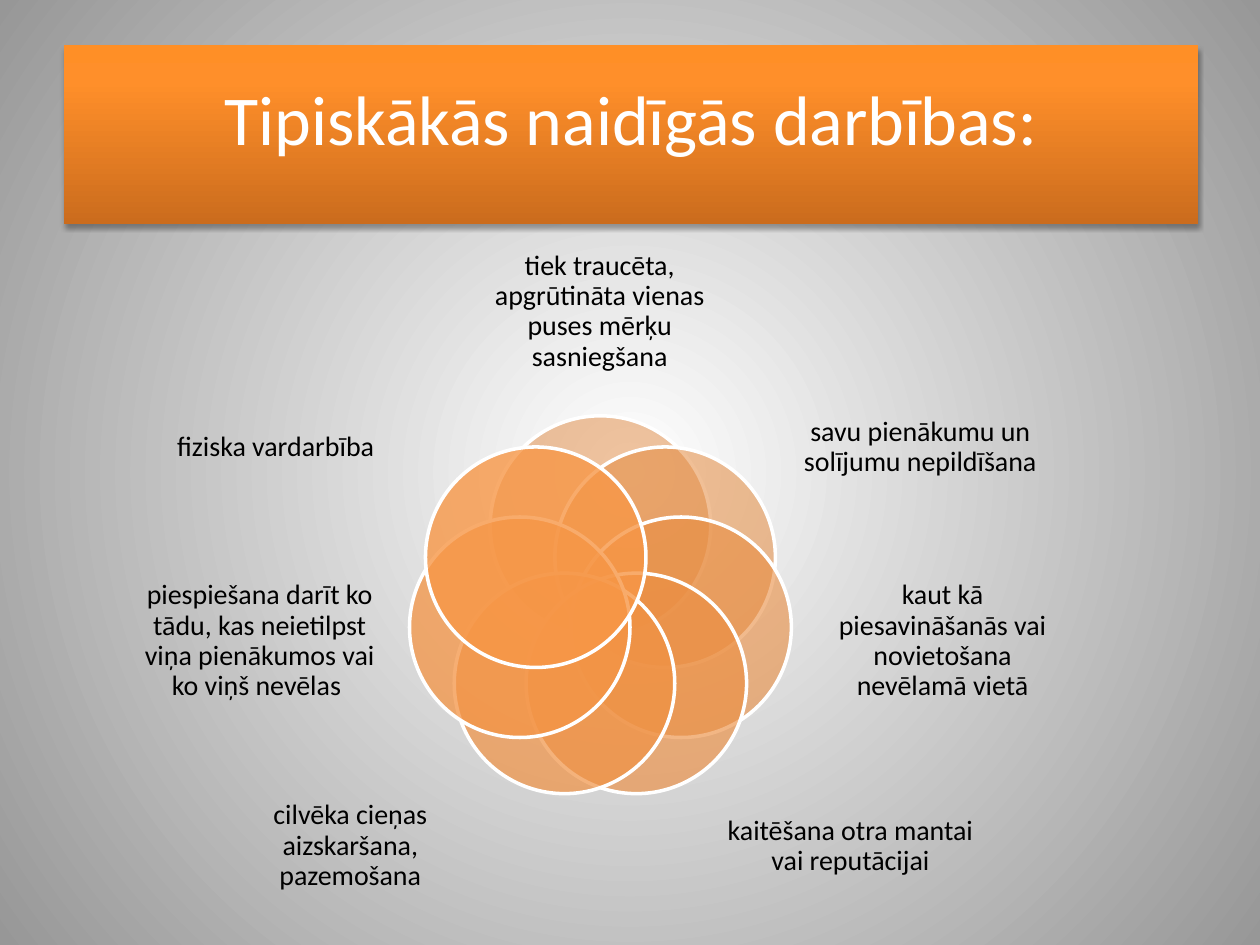
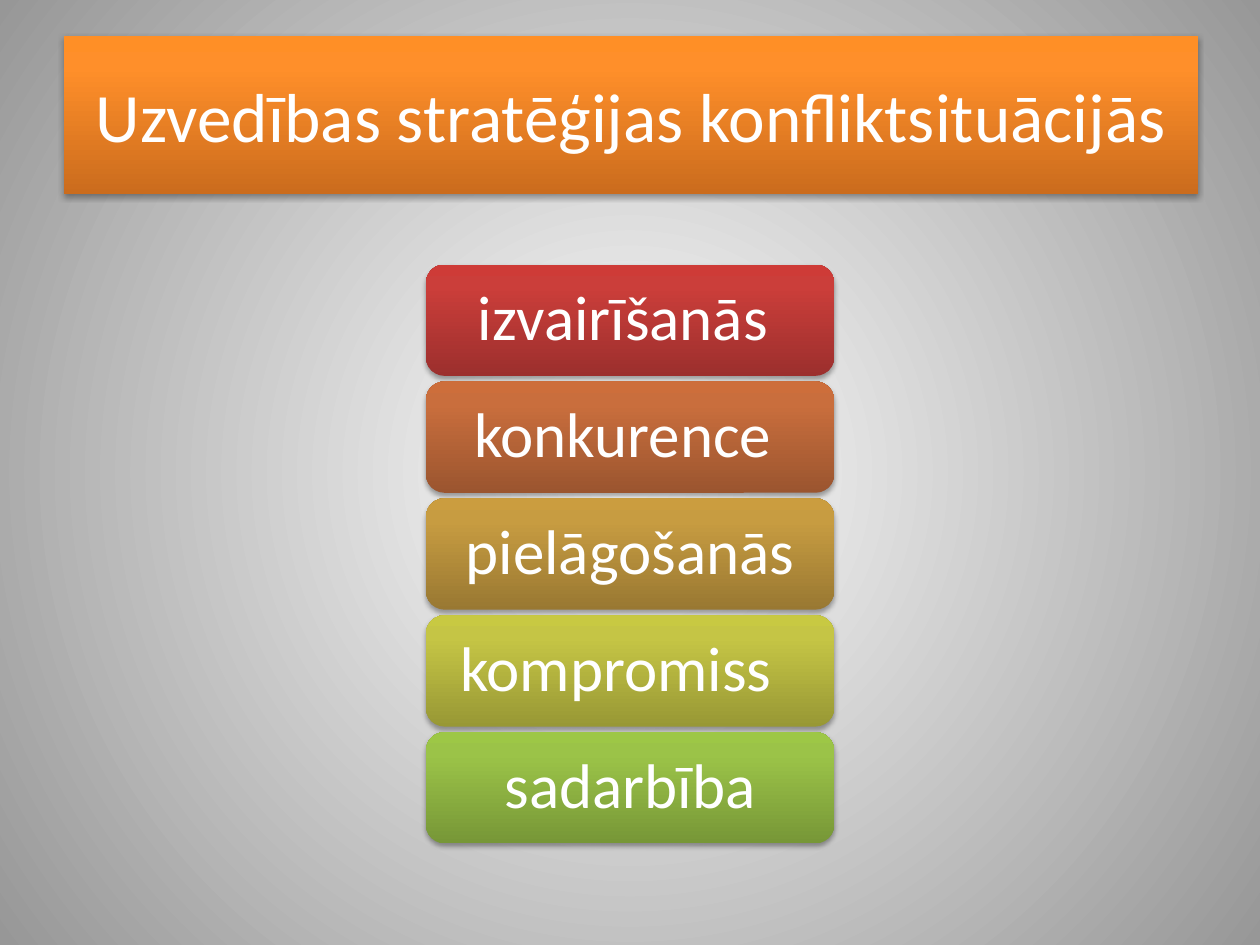
import math

import pptx
import pptx.dml.color
import pptx.enum.shapes
import pptx.enum.text
import pptx.oxml
import pptx.oxml.ns
import pptx.util

Pt = pptx.util.Pt
SHAPES = pptx.enum.shapes.MSO_SHAPE
FONT = "Calibri"
WHITE, BLACK = "FFFFFF", "000000"
DRAWING = 'xmlns:a="http://schemas.openxmlformats.org/drawingml/2006/main"'
BACKDROP = [(0, WHITE), (100, "979797")]
TITLE_STOPS = [(0, "CB6C1D"), (80, "FF8F2A"), (100, "FF8F26")]
RADIAL = ('<a:path path="circle"><a:fillToRect l="50000" t="50000" '
          'r="50000" b="50000"/></a:path>')
UPWARD = '<a:lin ang="16200000" scaled="0"/>'

# Circle fill, opacity in percent, label and label frame, clockwise from the top
ACTIONS = [
    ("E08840", 50, "tiek traucēta, apgrūtināta vienas puses mērķu sasniegšana",
     (270.7, 139.7, 144, 77)),
    ("E48B40", 55, "savu pienākumu un solījumu nepildīšana",
     (457.9, 213.1, 136, 85)),
    ("E98D41", 60, "kaut kā piesavināšanās vai novietošana nevēlamā vietā",
     (471.6, 321.1, 134, 90.7)),
    ("EC8F43", 65, "kaitēšana otra mantai vai reputācijai",
     (414, 442.1, 144, 82.8)),
    ("F09244", 70, "cilvēka cieņas aizskaršana, pazemošana",
     (128.2, 442.1, 144, 82.8)),
    ("F49445", 75, "piespiešana darīt ko tādu, kas neietilpst viņa pienākumos "
     "vai ko viņš nevēlas ", (81.4, 321.1, 134, 90.7)),
    ("F79747", 80, "fiziska vardarbība ", (91.4, 213.1, 136, 85)),
]

# Label, extra right inset, gradient colours from the bottom up
STRATEGIES = [
    ("izvairīšanās ", 0, ("9C2F2D", "CB3E3A", "CE3B37")),
    ("konkurence ", 0, ("9B552F", "C96E3D", "CD6E3B")),
    ("pielāgošanās", 0, ("997832", "C79C41", "CB9D3F")),
    ("kompromiss ", 8, ("989835", "C5C545", "C8C942")),
    ("sadarbība", 0, ("779737", "9BC348", "9DC746")),
]


def color(value):
    return pptx.dml.color.RGBColor.from_string(value)


def set_gradient(owner, fill, stops, direction):
    """Give the fill of owner, an XML element, any number of colour stops."""
    fill.solid()
    fill.fore_color.rgb = color(WHITE)
    stop_xml = "".join(
        f'<a:gs pos="{position * 1000}"><a:srgbClr val="{value}"/></a:gs>'
        for position, value in stops)
    gradient = pptx.oxml.parse_xml(
        f'<a:gradFill {DRAWING} rotWithShape="1"><a:gsLst>{stop_xml}</a:gsLst>'
        f'{direction}</a:gradFill>')
    solid = owner.find(pptx.oxml.ns.qn("a:solidFill"))
    owner.replace(solid, gradient)


def add_shadow(shape):
    effects = shape.element.spPr.find(pptx.oxml.ns.qn("a:effectLst"))
    effects.append(pptx.oxml.parse_xml(
        f'<a:outerShdw {DRAWING} blurRad="{Pt(3.1)}" dist="{Pt(1.8)}" '
        'dir="5400000" rotWithShape="0"><a:srgbClr val="000000">'
        '<a:alpha val="35000"/></a:srgbClr></a:outerShdw>'))


def set_text(shape, text, size, value, insets=(0, 0, 0, 0), spacing=0.9):
    """Write one centred paragraph; insets run left, top, right, bottom."""
    frame = shape.text_frame
    frame.word_wrap = True
    frame.vertical_anchor = pptx.enum.text.MSO_ANCHOR.MIDDLE
    (frame.margin_left, frame.margin_top,
     frame.margin_right, frame.margin_bottom) = map(Pt, insets)
    paragraph = frame.paragraphs[0]
    paragraph.text = text
    paragraph.alignment = pptx.enum.text.PP_ALIGN.CENTER
    paragraph.line_spacing = spacing
    paragraph.font.name = FONT
    paragraph.font.size = Pt(size)
    paragraph.font.color.rgb = color(value)


def add_panel(page, kind, frame, stops):
    """Add a borderless shape with a vertical gradient and a soft shadow."""
    panel = page.shapes.add_shape(kind, *map(Pt, frame))
    panel.line.fill.background()
    panel.shadow.inherit = False
    set_gradient(panel.element.spPr, panel.fill, stops, UPWARD)
    add_shadow(panel)
    return panel


def add_title(page, text, top, height, size, bottom_inset=3.6):
    panel = add_panel(page, SHAPES.RECTANGLE, (36.6, top, 648, height),
                      TITLE_STOPS)
    set_text(panel, text, size, WHITE, (7.2, 3.6, 7.2, bottom_inset), 1.0)


def add_circle(page, center_x, center_y, diameter, value, opacity):
    circle = page.shapes.add_shape(
        SHAPES.OVAL, Pt(center_x - diameter / 2), Pt(center_y - diameter / 2),
        Pt(diameter), Pt(diameter))
    circle.shadow.inherit = False
    circle.fill.solid()
    circle.fill.fore_color.rgb = color(value)
    fill_color = circle.element.spPr.find(
        pptx.oxml.ns.qn("a:solidFill") + "/" + pptx.oxml.ns.qn("a:srgbClr"))
    fill_color.append(pptx.oxml.parse_xml(
        f'<a:alpha {DRAWING} val="{opacity * 1000}"/>'))
    circle.line.color.rgb = color(WHITE)
    circle.line.width = Pt(2)


def add_label(page, text, frame):
    box = page.shapes.add_textbox(*map(Pt, frame))
    set_text(box, text, 16, BLACK)


def add_action_ring(page):
    center_x, center_y, radius = 343.1, 347.9, 47.3
    for index, (value, opacity, text, frame) in enumerate(ACTIONS):
        angle = 2 * math.pi * index / len(ACTIONS)
        add_circle(page, center_x + radius * math.sin(angle),
                   center_y - radius * math.cos(angle), 126, value, opacity)
        add_label(page, text, frame)


def add_strategy_stack(page):
    top, pitch = 151.2, 66.8
    for index, (text, extra, colors) in enumerate(STRATEGIES):
        panel = add_panel(page, SHAPES.ROUNDED_RECTANGLE,
                          (243.4, top + index * pitch, 233.3, 63.6),
                          list(zip((0, 80, 100), colors)))
        set_text(panel, text, 36, WHITE, (14, 8, 14 + extra, 8))


def main():
    deck = pptx.Presentation()
    deck.slide_width, deck.slide_height = Pt(720), Pt(540)
    master = deck.slide_master
    backdrop = master.background.fill
    backdrop.solid()
    properties = master.element.find(".//" + pptx.oxml.ns.qn("p:bgPr"))
    set_gradient(properties, backdrop, BACKDROP, RADIAL)
    blank = deck.slide_layouts[6]

    page = deck.slides.add_slide(blank)
    add_title(page, "Tipiskākās naidīgās darbības:", 26, 102, 40, 23.6)
    add_action_ring(page)

    page = deck.slides.add_slide(blank)
    add_title(page, "Uzvedības stratēģijas konfliktsituācijās", 20.6, 90, 39.6)
    add_strategy_stack(page)

    deck.save("out.pptx")


if __name__ == "__main__":
    main()
